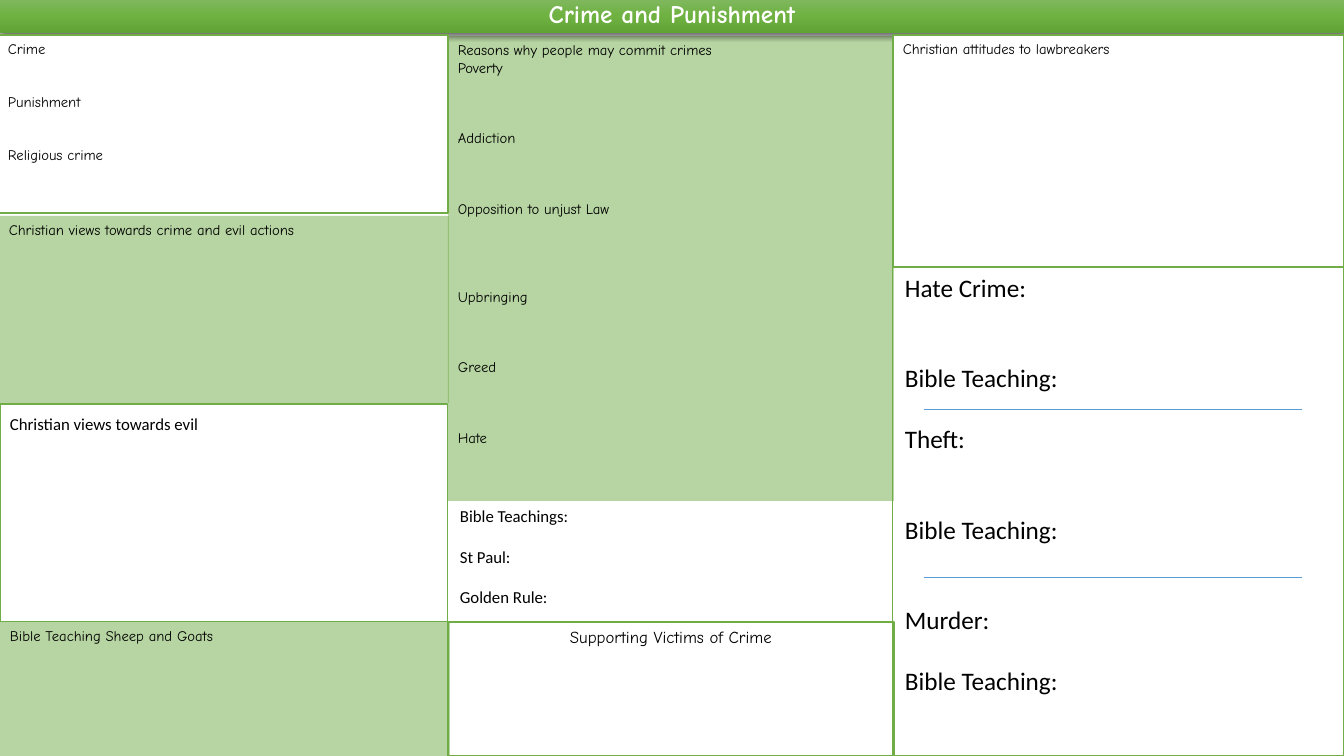
from copy import deepcopy
from dataclasses import dataclass

from lxml import etree
from pptx import Presentation
from pptx.dml.color import RGBColor
from pptx.enum.shapes import MSO_CONNECTOR, MSO_SHAPE
from pptx.enum.text import MSO_ANCHOR, PP_ALIGN
from pptx.oxml.ns import qn
from pptx.util import Emu, Pt

RECTANGLE = MSO_SHAPE.RECTANGLE
STRAIGHT = MSO_CONNECTOR.STRAIGHT
TOP, MIDDLE = MSO_ANCHOR.TOP, MSO_ANCHOR.MIDDLE
LEFT, CENTER = PP_ALIGN.LEFT, PP_ALIGN.CENTER

SCALE = 914400 / 100.8
LINE_HEIGHT = 1.2
COMIC, CALIBRI = "Comic Neue", "Calibri"
COLORS = {
    "white": "FFFFFF", "black": "000000", "green": "70AD47", "blue": "5B9BD5",
    "band_top": "81B861", "band_middle": "6FB242", "band_bottom": "62A336",
}


@dataclass(frozen=True)
class Entry:
    text: str
    lines_before: int = 0


@dataclass(frozen=True)
class Words:
    entries: tuple[Entry, ...]
    font: str = COMIC
    size: float = 10.5
    align: PP_ALIGN = LEFT
    color: str = "black"
    bold: bool = False
    anchor: MSO_ANCHOR = TOP
    spacing: float = 1.0


@dataclass(frozen=True)
class Area:
    left: int
    top: int
    width: int
    height: int


@dataclass(frozen=True)
class Panel:
    area: Area
    words: Words | None = None
    fill: str | None = None
    opacity: int = 100
    outline: float = 0


@dataclass(frozen=True)
class Note:
    area: Area
    words: Words


@dataclass(frozen=True)
class Rule:
    left: int
    right: int
    top: int


def px(length: int) -> Emu:
    return Emu(round(length * SCALE))


def rgb(name: str) -> RGBColor:
    return RGBColor.from_string(COLORS[name])


def bounds(area: Area) -> tuple[Emu, ...]:
    return px(area.left), px(area.top), px(area.width), px(area.height)


def write(box, words: Words) -> None:
    frame = box.text_frame
    frame.word_wrap = True
    frame.vertical_anchor = words.anchor
    for index, entry in enumerate(words.entries):
        para = frame.add_paragraph() if index else frame.paragraphs[0]
        para.text = entry.text
        para.alignment = words.align
        para.line_spacing = words.spacing
        if entry.lines_before:
            para.space_before = Pt(entry.lines_before * words.size * LINE_HEIGHT)
        para.font.name = words.font
        para.font.size = Pt(words.size)
        para.font.bold = words.bold
        para.font.color.rgb = rgb(words.color)


def draw_panel(page, panel: Panel):
    box = page.shapes.add_shape(RECTANGLE, *bounds(panel.area))
    box.shadow.inherit = False
    if panel.fill:
        box.fill.solid()
        box.fill.fore_color.rgb = rgb(panel.fill)
        if panel.opacity < 100:
            color = box._element.spPr.find(f"{qn('a:solidFill')}/{qn('a:srgbClr')}")
            etree.SubElement(color, qn("a:alpha"), val=str(panel.opacity * 1000))
    else:
        box.fill.background()
    if panel.outline:
        box.line.color.rgb = rgb("green")
        box.line.width = Pt(panel.outline)
    else:
        box.line.fill.background()
    if panel.words:
        write(box, panel.words)
    return box


def draw_note(page, note: Note) -> None:
    write(page.shapes.add_textbox(*bounds(note.area)), note.words)


def draw_title(page, panel: Panel) -> None:
    band = draw_panel(page, panel)
    band.fill.gradient()
    band.fill.gradient_angle = 270
    properties = band._element.spPr
    stop_list = properties.find(f"{qn('a:gradFill')}/{qn('a:gsLst')}")
    stop_list.insert(1, deepcopy(stop_list[0]))
    names = ("band_top", "band_middle", "band_bottom")
    for index, (stop, name) in enumerate(zip(band.fill.gradient_stops, names)):
        stop.position = index / 2
        stop.color.rgb = rgb(name)
    shadow = etree.SubElement(
        properties.find(qn("a:effectLst")), qn("a:outerShdw"),
        blurRad=str(Pt(4.5)), dist=str(Pt(1.5)), dir="5400000", rotWithShape="0")
    color = etree.SubElement(shadow, qn("a:srgbClr"), val=COLORS["black"])
    etree.SubElement(color, qn("a:alpha"), val="63000")


def draw_rule(page, rule: Rule) -> None:
    line = page.shapes.add_connector(
        STRAIGHT, px(rule.left), px(rule.top), px(rule.right), px(rule.top))
    line.line.color.rgb = rgb("blue")
    line.line.width = Pt(0.5)
    etree.SubElement(line._element.spPr, qn("a:effectLst"))


VICTIMS = Words((Entry("Supporting Victims of Crime"),), size=12, align=CENTER)
REASONS = Words((
    Entry("Reasons why people may commit crimes"), Entry("Poverty"),
    Entry("Addiction", 3), Entry("Opposition to unjust Law", 3),
    Entry("Upbringing", 4), Entry("Greed", 3), Entry("Hate", 3)))
TITLE = Words((Entry("Crime and Punishment"),), size=18, align=CENTER,
              color="white", bold=True, anchor=MIDDLE, spacing=0.9)
DEFINITIONS = Words((Entry("Crime"), Entry("Punishment", 2), Entry("Religious crime", 2)))
ACTIONS = Words((Entry("Christian views towards crime and evil actions"),))
ATTITUDES = Words((Entry("Christian attitudes to lawbreakers"),))
SHEEP = Words((Entry("Bible Teaching Sheep and Goats"),))
EVIL = Words((Entry("Christian views towards evil"),), CALIBRI, 12)
CRIMES = Words((
    Entry("Hate Crime:"), Entry("Bible Teaching:", 2),
    Entry("Theft:", 1), Entry("Bible Teaching:", 2),
    Entry("Murder:", 2), Entry("Bible Teaching:", 1)), CALIBRI, 18)
TEACHINGS = Words((
    Entry("Bible Teachings:"), Entry("St Paul:", 1), Entry("Golden Rule:", 1)), CALIBRI, 12)

BACK_PANELS = (
    Panel(Area(448, 622, 446, 134), VICTIMS, "white", outline=1),
    Panel(Area(448, 36, 446, 465), REASONS, "green", 50),
    Panel(Area(893, 267, 451, 489), outline=0.75),
)
TITLE_PANEL = Panel(Area(0, -2, 1344, 35), TITLE)
FRONT_PANELS = (
    Panel(Area(-2, 35, 450, 178), DEFINITIONS, "white", outline=1),
    Panel(Area(-1, 216, 450, 187), ACTIONS, "green", 50),
    Panel(Area(893, 35, 451, 232), ATTITUDES, "white", outline=1),
    Panel(Area(0, 622, 450, 134), SHEEP, "green", 50),
    Panel(Area(0, 404, 448, 218), outline=0.75),
)
NOTES = (
    Note(Area(0, 409, 255, 30), EVIL),
    Note(Area(895, 267, 282, 488), CRIMES),
    Note(Area(450, 501, 261, 112), TEACHINGS),
)
RULES = (Rule(924, 1302, 409), Rule(924, 1302, 577))


def main() -> None:
    deck = Presentation()
    deck.slide_width, deck.slide_height = px(1344), px(756)
    page = deck.slides.add_slide(deck.slide_layouts[6])
    for panel in BACK_PANELS:
        draw_panel(page, panel)
    draw_title(page, TITLE_PANEL)
    for panel in FRONT_PANELS:
        draw_panel(page, panel)
    for note in NOTES:
        draw_note(page, note)
    for rule in RULES:
        draw_rule(page, rule)
    deck.save("out.pptx")


if __name__ == "__main__":
    main()
